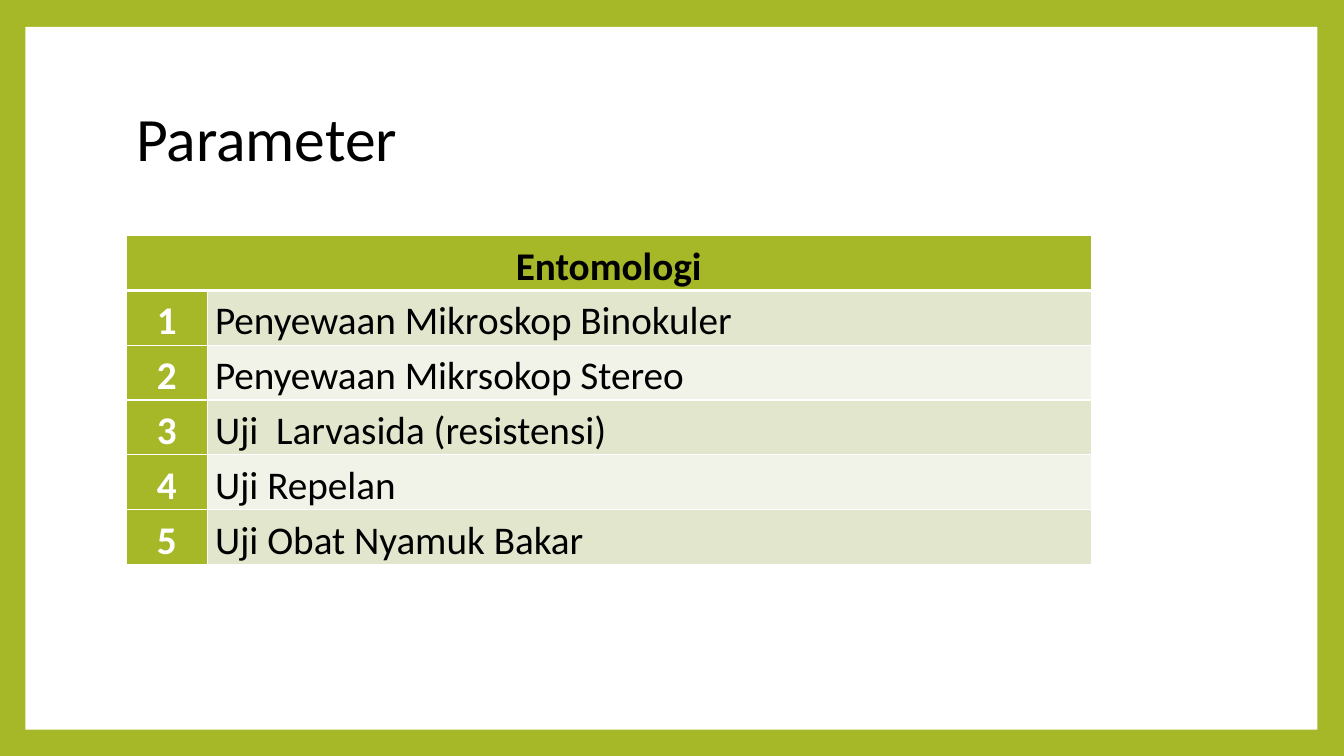
from lxml.etree import SubElement as Sub
from pptx import Presentation
from pptx.dml.color import RGBColor
from pptx.enum.shapes import MSO_SHAPE as Shape
from pptx.enum.text import MSO_ANCHOR as Anchor, PP_ALIGN as Align
from pptx.oxml.ns import qn
from pptx.util import Cm, Pt

GREEN, WHITE, BLACK = "A6B727", "FFFFFF", "000000"
BANDS = ("E1E6CD", "F1F3E8")
TESTS = (
    "Penyewaan Mikroskop Binokuler",
    "Penyewaan Mikrsokop Stereo",
    "Uji  Larvasida (resistensi)",
    "Uji Repelan",
    "Uji Obat Nyamuk Bakar",
)


def color(code):
    return RGBColor.from_string(code)


class Page:
    """Holds the style and the current slide."""

    font = "Calibri"

    def __init__(self, slide):
        self.slide = slide

    def back(self, fill):
        paint = self.slide.background.fill
        paint.solid()
        paint.fore_color.rgb = color(fill)

    def panel(self, left, top, width, height, fill):
        box = self.slide.shapes.add_shape(
            Shape.RECTANGLE, Cm(left), Cm(top), Cm(width), Cm(height))
        box.shadow.inherit = False
        box.fill.solid()
        box.fill.fore_color.rgb = color(fill)
        box.line.fill.background()

    def label(self, frame, text, size, ink=BLACK, bold=False,
              align=Align.LEFT, space=1.0):
        para = frame.paragraphs[0]
        para.alignment, para.line_spacing = align, space
        run = para.add_run()
        run.text = text
        font = run.font
        font.name, font.size, font.bold = self.font, Pt(size), bold
        font.color.rgb = color(ink)

    def title(self, left, top, width, height, text):
        box = self.slide.shapes.add_textbox(
            Cm(left), Cm(top), Cm(width), Cm(height))
        frame = box.text_frame
        frame.word_wrap = True
        frame.vertical_anchor = Anchor.MIDDLE
        self.label(frame, text, 44, space=0.9)

    def border(self, cell, **widths):
        props = cell._tc.get_or_add_tcPr()
        for side in "LRTB":
            line = Sub(props, qn("a:ln" + side),
                       w=str(Pt(widths.get(side, 1))))
            paint = Sub(line, qn("a:solidFill"))
            Sub(paint, qn("a:srgbClr"), val=WHITE)

    def cell(self, cell, fill, text, **style):
        cell.margin_left = cell.margin_right = Cm(0.19)
        cell.margin_top = cell.margin_bottom = 0
        cell.fill.solid()
        cell.fill.fore_color.rgb = color(fill)
        self.label(cell.text_frame, text, 28, space=1.15, **style)

    def table(self, left, top, cols, row, head, items):
        count = len(items) + 1
        grid = self.slide.shapes.add_table(
            count, len(cols), Cm(left), Cm(top),
            Cm(sum(cols)), Cm(row * count)).table
        for col, width in zip(grid.columns, cols):
            col.width = Cm(width)

        # Heading across both columns, with a heavy rule below
        for col in range(len(cols)):
            self.border(grid.cell(0, col), B=3)
        grid.cell(0, 0).merge(grid.cell(0, len(cols) - 1))
        self.cell(grid.cell(0, 0), GREEN, head,
                  bold=True, align=Align.CENTER)

        # Numbered rows in two tints
        for num, item in enumerate(items, 1):
            mark, name = grid.cell(num, 0), grid.cell(num, 1)
            for part in (mark, name):
                self.border(part, T=3 if num == 1 else 1)
            self.cell(mark, GREEN, str(num), ink=WHITE,
                      bold=True, align=Align.CENTER)
            self.cell(name, BANDS[(num - 1) % 2], item)


def main():
    deck = Presentation()
    deck.slide_width, deck.slide_height = Cm(33.87), Cm(19.05)
    page = Page(deck.slides.add_slide(deck.slide_layouts[6]))

    # Frame
    page.back(GREEN)
    page.panel(0.64, 0.68, 32.56, 17.71, WHITE)

    # Title and list of tests
    page.title(3.18, 1.7, 27.43, 3.76, "Parameter")
    page.table(3.18, 5.94, (2.05, 22.27), 1.38, "Entomologi", TESTS)

    deck.save("out.pptx")


if __name__ == "__main__":
    main()
